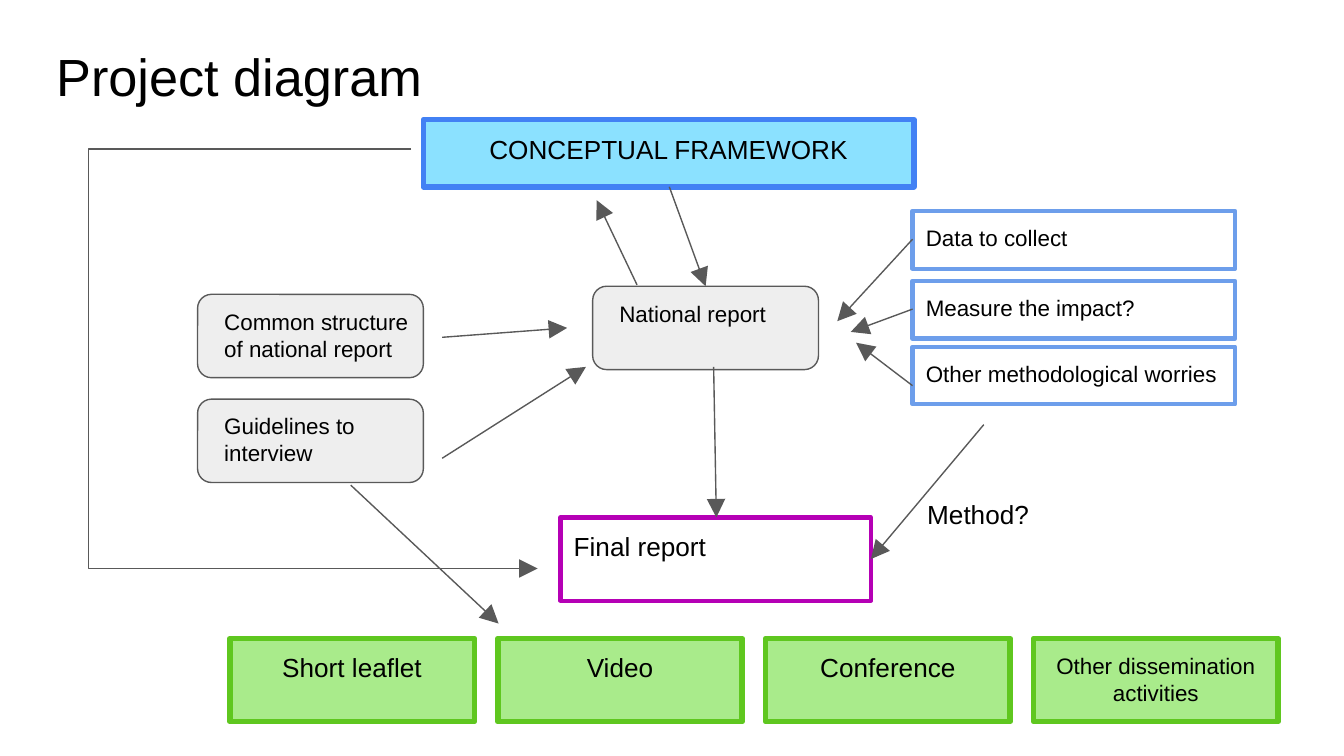
from dataclasses import dataclass
from typing import Optional

import pptx
import pptx.dml.color
import pptx.enum.shapes
import pptx.enum.text
import pptx.oxml
import pptx.oxml.ns
import pptx.util

Inches = pptx.util.Inches
Pt = pptx.util.Pt
SHAPE = pptx.enum.shapes.MSO_SHAPE
ALIGN = pptx.enum.text.PP_ALIGN
NS = pptx.oxml.ns.nsdecls("a")

COLORS = {
    "text": "000000",
    "connector": "595959",
    "grey": "EEEEEE",
    "method": "6D9EEB",
    "final": "B500B5",
    "green": "5DDB24",
    "green_edge": "5FC71F",
    "blue": "3BCDFF",
    "blue_edge": "4281F4",
}


@dataclass
class Box:
    text: str
    left: float
    top: float
    width: float
    height: float
    edge: str
    weight: float
    size: float = 14
    fill: Optional[str] = None
    opacity: int = 100
    align: ALIGN = ALIGN.LEFT


@dataclass
class Card:
    text: str
    left: float
    top: float
    label_width: float = 1.47


@dataclass
class Arrow:
    x1: float
    y1: float
    x2: float
    y2: float


def rgb(name: str) -> pptx.dml.color.RGBColor:
    return pptx.dml.color.RGBColor.from_string(COLORS[name])


def write(s, text: str, size: float, align: ALIGN = ALIGN.LEFT) -> None:
    tf = s.text_frame
    tf.word_wrap = True
    tf.vertical_anchor = pptx.enum.text.MSO_ANCHOR.TOP
    tf.margin_left = tf.margin_right = tf.margin_top = tf.margin_bottom = Inches(0.1)
    p = tf.paragraphs[0]
    p.alignment = align
    r = p.add_run()
    r.text = text
    r.font.name = "Arial"
    r.font.size = Pt(size)
    r.font.color.rgb = rgb("text")


def add_label(slide, text: str, left: float, top: float, width: float, height: float,
              size: float) -> None:
    s = slide.shapes.add_textbox(Inches(left), Inches(top), Inches(width), Inches(height))
    write(s, text, size)


def style(s, edge: str, weight: float, fill: Optional[str] = None, opacity: int = 100) -> None:
    s.shadow.inherit = False
    s.line.color.rgb = rgb(edge)
    s.line.width = Pt(weight)
    if fill is None:
        s.fill.background()
        return
    s.fill.solid()
    s.fill.fore_color.rgb = rgb(fill)
    if opacity < 100:
        color = s._element.spPr.find("./" + pptx.oxml.ns.qn("a:solidFill"))[0]
        color.append(pptx.oxml.parse_xml(f'<a:alpha {NS} val="{opacity * 1000}"/>'))


def add_box(slide, box: Box) -> None:
    s = slide.shapes.add_shape(SHAPE.RECTANGLE, Inches(box.left), Inches(box.top),
                               Inches(box.width), Inches(box.height))
    style(s, box.edge, box.weight, box.fill, box.opacity)
    write(s, box.text, box.size, box.align)


def add_card(slide, card: Card) -> None:
    s = slide.shapes.add_shape(SHAPE.ROUNDED_RECTANGLE, Inches(card.left), Inches(card.top),
                               Inches(1.68), Inches(0.62))
    style(s, "connector", 0.75, "grey")
    add_label(slide, card.text, card.left + 0.1, card.top, card.label_width, 0.62, 12)


def add_head(s) -> None:
    s.line._get_or_add_ln().append(
        pptx.oxml.parse_xml(f'<a:tailEnd {NS} type="triangle" w="lg" len="lg"/>'))


def add_arrow(slide, arrow: Arrow) -> None:
    s = slide.shapes.add_connector(pptx.enum.shapes.MSO_CONNECTOR.STRAIGHT,
                                   Inches(arrow.x1), Inches(arrow.y1),
                                   Inches(arrow.x2), Inches(arrow.y2))
    s.line.color.rgb = rgb("connector")
    s.line.width = Pt(0.75)
    add_head(s)
    s._element.spPr.append(pptx.oxml.parse_xml(f"<a:effectLst {NS}/>"))


def add_route(slide, points: list[tuple[float, float]]) -> None:
    start, *rest = [(Inches(x), Inches(y)) for x, y in points]
    builder = slide.shapes.build_freeform(*start)
    builder.add_line_segments(rest, close=False)
    s = builder.convert_to_shape()
    style(s, "connector", 0.75)
    add_head(s)


CARDS = [
    Card("Common structure of national report", 1.47, 2.19, 1.64),
    Card("Guidelines to interview", 1.47, 2.97),
    Card("National report", 4.41, 2.13),
]
METHODS = [("Data to collect", 1.57), ("Measure the impact?", 2.09),
           ("Other methodological worries", 2.58)]
OUTPUTS = [("Short leaflet", 14), ("Video", 14), ("Conference", 14),
           ("Other dissemination activities", 12)]
OUTPUT_LEFT, OUTPUT_LAST = 1.71, 7.69
OUTPUT_PITCH = (OUTPUT_LAST - OUTPUT_LEFT) / (len(OUTPUTS) - 1)
BOXES = [
    *(Box(text, 6.79, top, 2.4, 0.43, "method", 2.25, 12) for text, top in METHODS),
    Box("Final report", 4.17, 3.85, 2.31, 0.62, "final", 2.25),
    *(Box(text, OUTPUT_LEFT + OUTPUT_PITCH * i, 4.75, 1.82, 0.62, "green_edge", 3, size,
          "green", 53, ALIGN.CENTER) for i, (text, size) in enumerate(OUTPUTS)),
    Box("CONCEPTUAL FRAMEWORK", 3.15, 0.89, 3.65, 0.5, "blue_edge", 3, 14,
        "blue", 59, ALIGN.CENTER),
]
ARROWS = [
    Arrow(4.98, 1.39, 5.25, 2.13),
    Arrow(3.29, 2.51, 4.22, 2.44),
    Arrow(3.29, 3.41, 4.36, 2.73),
    Arrow(6.79, 1.78, 6.23, 2.39),
    Arrow(6.79, 2.3, 6.33, 2.47),
    Arrow(6.79, 2.87, 6.37, 2.55),
    Arrow(5.31, 2.73, 5.33, 3.85),
    Arrow(7.32, 3.16, 6.48, 4.16),
    Arrow(2.61, 3.61, 3.71, 4.64),
    Arrow(4.74, 2.12, 4.44, 1.49),
]


def main() -> None:
    prs = pptx.Presentation()
    prs.slide_width = Inches(10)
    prs.slide_height = prs.slide_width * 9 // 16
    slide = prs.slides.add_slide(prs.slide_layouts[6])
    for card in CARDS:
        add_card(slide, card)
    for box in BOXES:
        add_box(slide, box)
    for arrow in ARROWS:
        add_arrow(slide, arrow)
    add_route(slide, [(3.06, 1.11), (0.66, 1.11), (0.66, 4.23), (4, 4.23)])
    add_label(slide, "Method?", 6.8, 3.61, 1.25, 0.43, 14)
    add_label(slide, "Project diagram", 0.32, 0.23, 9.32, 0.63, 28)
    prs.save("out.pptx")


if __name__ == "__main__":
    main()
